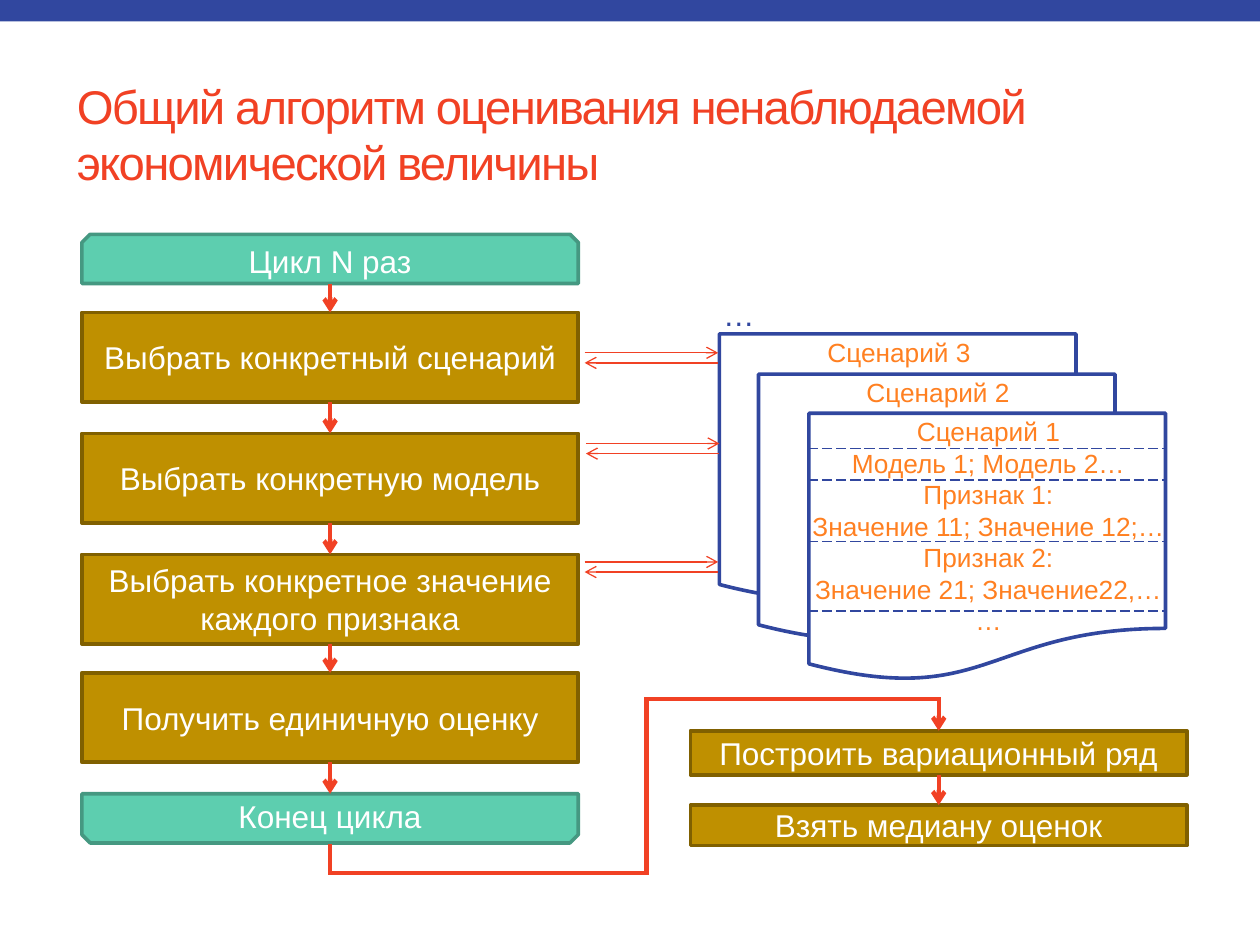
"""Build a slide with the flowchart for estimating an unobserved economic value."""
from dataclasses import dataclass
from itertools import pairwise

from lxml import etree
from pptx import Presentation
from pptx import util as u
from pptx.dml.color import RGBColor
from pptx.enum import dml, shapes, text
from pptx.oxml import ns

BLUE = RGBColor(0x31, 0x47, 0x9F)
RED = RGBColor(0xF1, 0x41, 0x24)
ORANGE = RGBColor(0xFF, 0x80, 0x21)
GOLD = RGBColor(0xBF, 0x90, 0x00)
DARK_GOLD = RGBColor(0x80, 0x60, 0x00)
MINT = RGBColor(0x5D, 0xCE, 0xAF)
DARK_MINT = RGBColor(0x45, 0x98, 0x81)
WHITE = RGBColor(0xFF, 0xFF, 0xFF)
FONT = "Arial"
STEP_WIDTH = 3.94
STEP_HEIGHT = 0.71
LOOP_HEIGHT = 0.39
LOOP_LEFT = 0.65
FINAL_LEFT = 5.48
LOOP_AXIS = LOOP_LEFT + STEP_WIDTH / 2
FINAL_AXIS = FINAL_LEFT + STEP_WIDTH / 2
OUTLINE = 2.08
FLOW_WEIGHT = 2.5
THIN_WEIGHT = 0.75


@dataclass(frozen=True)
class Step:
    label: str
    left: float
    top: float
    height: float = STEP_HEIGHT

    @property
    def bottom(self) -> float:
        return self.top + self.height


@dataclass(frozen=True)
class Scenario:
    lines: tuple[str, ...]
    left: float
    top: float


LOOP_START = Step("Цикл N раз", LOOP_LEFT, 1.86, LOOP_HEIGHT)
LOOP_END = Step("Конец цикла", LOOP_LEFT, 6.3, LOOP_HEIGHT)
LOOP_STEPS = (
    Step("Выбрать конкретный сценарий", LOOP_LEFT, 2.48),
    Step("Выбрать конкретную модель", LOOP_LEFT, 3.44),
    Step("Выбрать конкретное значение каждого признака", LOOP_LEFT, 4.4),
    Step("Получить единичную оценку", LOOP_LEFT, 5.34),
)
FINAL_STEPS = (
    Step("Построить вариационный ряд", FINAL_LEFT, 5.8, 0.35),
    Step("Взять медиану оценок", FINAL_LEFT, 6.39, 0.32),
)
SCENARIOS = (
    Scenario(("Сценарий 3",), 5.71, 2.65),
    Scenario(("Сценарий 2",), 6.02, 2.97),
    Scenario(
        ("Сценарий 1", "Модель 1; Модель 2…", "Признак 1:", "Значение 11; Значение 12;…",
         "Признак 2:", "Значение 21; Значение22,…", "…"),
        6.42, 3.28,
    ),
)
EXCHANGES = ((4.64, 2.8), (4.65, 3.52), (4.64, 4.46))
DIVIDERS = (3.56, 3.81, 4.3, 4.85)
EXIT_ROUTE = ((LOOP_AXIS, LOOP_END.bottom + 0.03), (LOOP_AXIS, 6.93), (5.13, 6.93),
              (5.13, 5.55), (FINAL_AXIS, 5.55))


def add_run(paragraph, words: str, size: float, color: RGBColor):
    run = paragraph.add_run()
    run.text = words
    run.font.name = FONT
    run.font.size = u.Pt(size)
    run.font.color.rgb = color
    return run


def add_box(slide, kind, left: float, top: float, width: float, height: float,
            fill: RGBColor, edge: RGBColor):
    box = slide.shapes.add_shape(kind, *map(u.Inches, (left, top, width, height)))
    box.shadow.inherit = False
    box.fill.solid()
    box.fill.fore_color.rgb = fill
    box.line.color.rgb = edge
    box.line.width = u.Pt(OUTLINE)
    return box


def add_step(slide, step: Step, kind=shapes.MSO_SHAPE.FLOWCHART_PROCESS,
             fill: RGBColor = GOLD, edge: RGBColor = DARK_GOLD):
    box = add_box(slide, kind, step.left, step.top, STEP_WIDTH, step.height, fill, edge)
    frame = box.text_frame
    frame.word_wrap = True
    frame.vertical_anchor = text.MSO_ANCHOR.MIDDLE
    frame.paragraphs[0].alignment = text.PP_ALIGN.CENTER
    add_run(frame.paragraphs[0], step.label, 18, WHITE)
    return box


def add_scenario(slide, scenario: Scenario) -> None:
    page = add_box(slide, shapes.MSO_SHAPE.FLOWCHART_DOCUMENT, scenario.left, scenario.top,
                   2.83, 2.13, WHITE, BLUE)
    frame = page.text_frame
    frame.word_wrap = True
    frame.vertical_anchor = text.MSO_ANCHOR.TOP
    frame.margin_left = frame.margin_top = u.Inches(0.02)
    frame.margin_right = frame.margin_bottom = 0
    for index, words in enumerate(scenario.lines):
        paragraph = frame.add_paragraph() if index else frame.paragraphs[0]
        paragraph.alignment = text.PP_ALIGN.CENTER
        add_run(paragraph, words, 15, ORANGE)


def add_line(slide, start: tuple[float, float], end: tuple[float, float], weight: float,
             color: RGBColor = RED, arrow: bool = False):
    line = slide.shapes.add_connector(
        shapes.MSO_CONNECTOR.STRAIGHT, *map(u.Inches, (*start, *end)))
    line.line.color.rgb = color
    line.line.width = u.Pt(weight)
    if arrow:
        etree.SubElement(line.line._get_or_add_ln(), ns.qn("a:tailEnd"), type="arrow")
    etree.SubElement(line._element.spPr, ns.qn("a:effectLst"))
    return line


def add_flow(slide, x: float, top: float, bottom: float, source=None, target=None) -> None:
    arrow = add_line(slide, (x, top), (x, bottom), FLOW_WEIGHT, arrow=True)
    if source is not None:
        arrow.begin_connect(source, 2)
    if target is not None:
        arrow.end_connect(target, 0)


def add_heading(slide) -> None:
    band = add_box(slide, shapes.MSO_SHAPE.RECTANGLE, 0, 0, 10, 0.17, BLUE, BLUE)
    band.line.fill.background()
    title = slide.shapes.title
    title.left, title.top, title.width, title.height = map(u.Inches, (0.51, 0.52, 9, 1.08))
    frame = title.text_frame
    frame.word_wrap = True
    frame.auto_size = text.MSO_AUTO_SIZE.NONE
    frame.vertical_anchor = text.MSO_ANCHOR.MIDDLE
    frame.paragraphs[0].alignment = text.PP_ALIGN.LEFT
    heading = add_run(frame.paragraphs[0],
                      "Общий алгоритм оценивания ненаблюдаемой экономической величины", 27, RED)
    heading._r.get_or_add_rPr().set("spc", "-100")


def add_scenarios(slide) -> None:
    for scenario in SCENARIOS:
        add_scenario(slide, scenario)
    for y in DIVIDERS:
        divider = add_line(slide, (6.41, y), (9.25, y), THIN_WEIGHT, BLUE)
        divider.line.dash_style = dml.MSO_LINE.LONG_DASH
    more = slide.shapes.add_textbox(*map(u.Inches, (5.64, 2.29, 0.66, 0.4)))
    more.text_frame.word_wrap = True
    add_run(more.text_frame.paragraphs[0], "…", 18, BLUE)


def add_algorithm(slide) -> None:
    snipped = shapes.MSO_SHAPE.SNIP_2_SAME_RECTANGLE
    add_step(slide, LOOP_START, snipped, MINT, DARK_MINT)
    loop_end = add_step(slide, LOOP_END, snipped, MINT, DARK_MINT)
    loop_end.adjustments[0], loop_end.adjustments[1] = 0, 0.17

    for axis, steps in ((LOOP_AXIS, LOOP_STEPS), (FINAL_AXIS, FINAL_STEPS)):
        boxes = [add_step(slide, step) for step in steps]
        for (upper, source), (lower, target) in pairwise(zip(steps, boxes)):
            add_flow(slide, axis, upper.bottom, lower.top, source, target)
        if steps is LOOP_STEPS:
            add_flow(slide, axis, LOOP_START.bottom, steps[0].top, target=boxes[0])
            add_flow(slide, axis, steps[-1].bottom, LOOP_END.top, source=boxes[-1])
        else:
            add_flow(slide, axis, EXIT_ROUTE[-1][1], steps[0].top, target=boxes[0])

    for start, end in pairwise(EXIT_ROUTE):
        segment = add_line(slide, start, end, FLOW_WEIGHT)
        segment.line._get_or_add_ln().set("cap", "sq")
    for x, y in EXCHANGES:
        add_line(slide, (x, y), (x + 1.06, y), THIN_WEIGHT, arrow=True)
        add_line(slide, (x + 1.06, y + 0.08), (x, y + 0.08), THIN_WEIGHT, arrow=True)


def main() -> None:
    deck = Presentation()
    deck.slide_width, deck.slide_height = u.Inches(10), u.Inches(7.5)
    slide = deck.slides.add_slide(deck.slide_layouts[5])
    add_heading(slide)
    add_scenarios(slide)
    add_algorithm(slide)
    deck.save("out.pptx")


if __name__ == "__main__":
    main()
